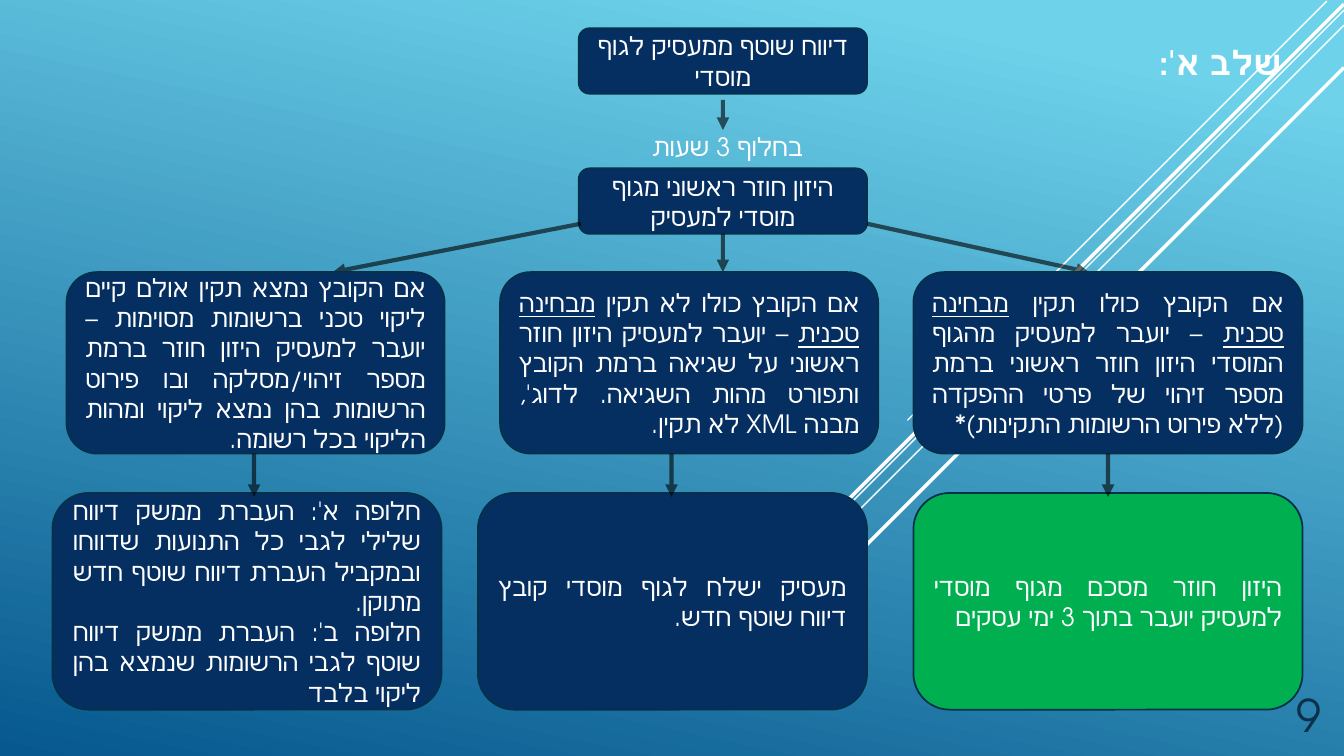
from dataclasses import dataclass

from lxml.etree import SubElement
from pptx import Presentation
from pptx.dml.color import RGBColor
from pptx.enum.shapes import MSO_CONNECTOR, MSO_SHAPE
from pptx.enum.text import MSO_ANCHOR, PP_ALIGN
from pptx.oxml.ns import qn
from pptx.util import Inches, Pt


@dataclass(frozen=True)
class Theme:
    font: str = "TeX Gyre Adventor"
    sky: str = "6ED2EB"
    sea: str = "06588E"
    navy: str = "052F61"
    green: str = "00B050"
    edge: str = "043148"
    white: str = "FFFFFF"
    black: str = "000000"
    ink: str = "0A304A"
    body: int = 18
    title: int = 24
    page: int = 32


T = Theme()
rgb = RGBColor.from_string

# Each case, from left to right: box, text, next step's left, text, fill, arrow x.
# Bars enclose underlined words.
CASES = [
    (0.66, 3.75, ["אם הקובץ נמצא תקין אולם קיים ליקוי טכני ברשומות מסוימות – יועבר "
                  "למעסיק היזון חוזר ברמת מספר זיהוי/מסלקה ובו פירוט הרשומות בהן "
                  "נמצא ליקוי ומהות הליקוי בכל רשומה."],
     0.52, ["חלופה א': העברת ממשק דיווח שלילי לגבי כל התנועות שדווחו ובמקביל "
            "העברת דיווח שוטף חדש מתוקן.",
            "חלופה ב': העברת ממשק דיווח שוטף לגבי הרשומות שנמצא בהן ליקוי בלבד"],
     T.navy, 2.52),
    (4.96, 3.75, ["אם הקובץ כולו לא תקין |מבחינה טכנית| – יועבר למעסיק היזון חוזר "
                  "ראשוני על שגיאה ברמת הקובץ ותפורט מהות השגיאה. לדוג', מבנה XML "
                  "לא תקין."],
     4.74, ["מעסיק ישלח לגוף מוסדי קובץ דיווח שוטף חדש."], T.navy, 6.66),
    (9.06, 3.86, ["אם הקובץ כולו תקין |מבחינה טכנית| – יועבר למעסיק מהגוף המוסדי "
                  "היזון חוזר ראשוני ברמת מספר זיהוי של פרטי ההפקדה (ללא פירוט "
                  "הרשומות התקינות)*"],
     9.06, ["היזון חוזר מסכם מגוף מוסדי למעסיק יועבר בתוך 3 ימי עסקים"],
     T.green, 10.99),
]


def write(shape, paras, align, size=T.body, color=T.white, bold=False,
          anchor=MSO_ANCHOR.MIDDLE):
    frame = shape.text_frame
    frame.word_wrap = True
    frame.vertical_anchor = anchor
    for i, text in enumerate(paras):
        para = frame.paragraphs[0] if i == 0 else frame.add_paragraph()
        para.alignment = align
        font = para.font
        font.name, font.size, font.bold = T.font, Pt(size), bold
        font.color.rgb = rgb(color)
        # Right-to-left text with the same font for Hebrew
        props = para._p.get_or_add_pPr()
        props.set("rtl", "1")
        SubElement(props.find(qn("a:defRPr")), qn("a:cs"), typeface=T.font)
        for j, part in enumerate(text.split("|")):
            run = para.add_run()
            run.text = part
            if j % 2:
                run.font.underline = True


def label(slide, box, text, **style):
    shape = slide.shapes.add_textbox(*map(Inches, box))
    write(shape, [text], PP_ALIGN.RIGHT, **style)


def card(slide, box, paras, align=PP_ALIGN.JUSTIFY, fill=T.navy):
    shape = slide.shapes.add_shape(MSO_SHAPE.ROUNDED_RECTANGLE, *map(Inches, box))
    shape.shadow.inherit = False
    shape.fill.solid()
    shape.fill.fore_color.rgb = rgb(fill)
    shape.line.color.rgb = rgb(T.edge)
    shape.line.width = Pt(1.25)
    write(shape, paras, align)


def line(slide, ends, color, width):
    link = slide.shapes.add_connector(MSO_CONNECTOR.STRAIGHT, *map(Inches, ends))
    link.line.color.rgb = rgb(color)
    link.line.width = Pt(width)
    SubElement(link._element.spPr, qn("a:effectLst"))
    return link


def arrow(slide, *ends):
    stroke = line(slide, ends, T.black, 3).line._get_or_add_ln()
    tint = stroke.find(qn("a:solidFill"))[0]
    SubElement(tint, qn("a:alpha"), val="60000")
    SubElement(stroke, qn("a:tailEnd"), type="triangle")


def backdrop(slide):
    fill = slide.background.fill
    fill.gradient()
    fill.gradient_angle = 258
    for stop, color, place in zip(fill.gradient_stops, (T.sky, T.sea), (0.1, 1)):
        stop.color.rgb = rgb(color)
        stop.position = place
    # Diagonal rays: start, horizontal run (negative, at 45 degrees), weight
    for x, y, run, width in [(13.16, 0.01, 4.16, 1), (13.33, 0.1, 6.65, 1),
                             (13.33, 0.25, 5.42, 1), (13.33, 0.04, 5.3, 2.5),
                             (13.33, 0.67, 4.75, 2.5)]:
        line(slide, (x, y, x - run, y + run), T.white, width)


def intro(slide, left, top, width):
    mid = left + width / 2
    high = 0.65
    second = top + 1.39
    card(slide, (left, top, width, high), ["דיווח שוטף ממעסיק לגוף מוסדי"],
         PP_ALIGN.CENTER)
    arrow(slide, mid, top + 0.71, mid, top + 1.01)
    label(slide, (left - 0.47, top + 0.97, 2.79, 0.4), "בחלוף 3 שעות")
    card(slide, (left, second, width, high), ["היזון חוזר ראשוני מגוף מוסדי למעסיק"],
         PP_ALIGN.CENTER)
    # Branches to the three cases
    fork = second + 0.55
    foot = second + 1.03
    arrow(slide, left + width, fork, 10.8, foot)
    arrow(slide, mid, second + high, mid, foot)
    arrow(slide, left + 0.02, fork, 3.3, foot)


def cases(slide, top):
    high = 1.8
    low = top + 2.19
    for left, width, text, start, step, fill, mid in CASES:
        card(slide, (left, top, width, high), text)
        card(slide, (start, low, 3.86, 2.15), step, fill=fill)
        arrow(slide, mid, top + high, mid, low + 0.04)


def main():
    deck = Presentation()
    deck.slide_width, deck.slide_height = Inches(13.33), Inches(7.5)
    slide = deck.slides.add_slide(deck.slide_layouts[6])
    backdrop(slide)
    label(slide, (9.16, 0.37, 3.65, 0.5), "שלב א':", size=T.title, bold=True)
    intro(slide, 5.74, 0.28, 2.86)
    cases(slide, 2.7)
    label(slide, (11.95, 6.68, 1.25, 0.73), "9", size=T.page, color=T.ink,
          anchor=MSO_ANCHOR.BOTTOM)
    deck.save("out.pptx")


if __name__ == "__main__":
    main()
